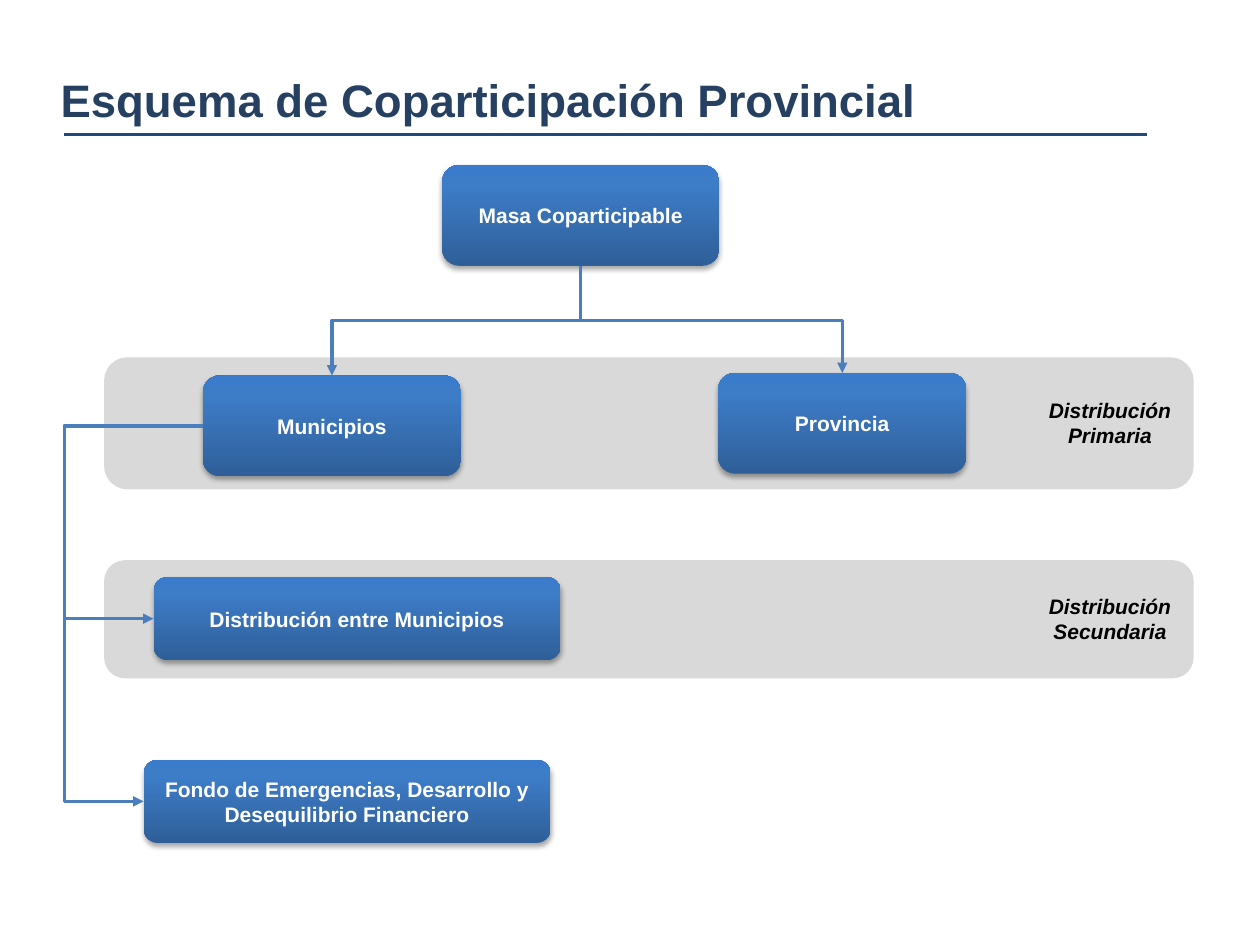
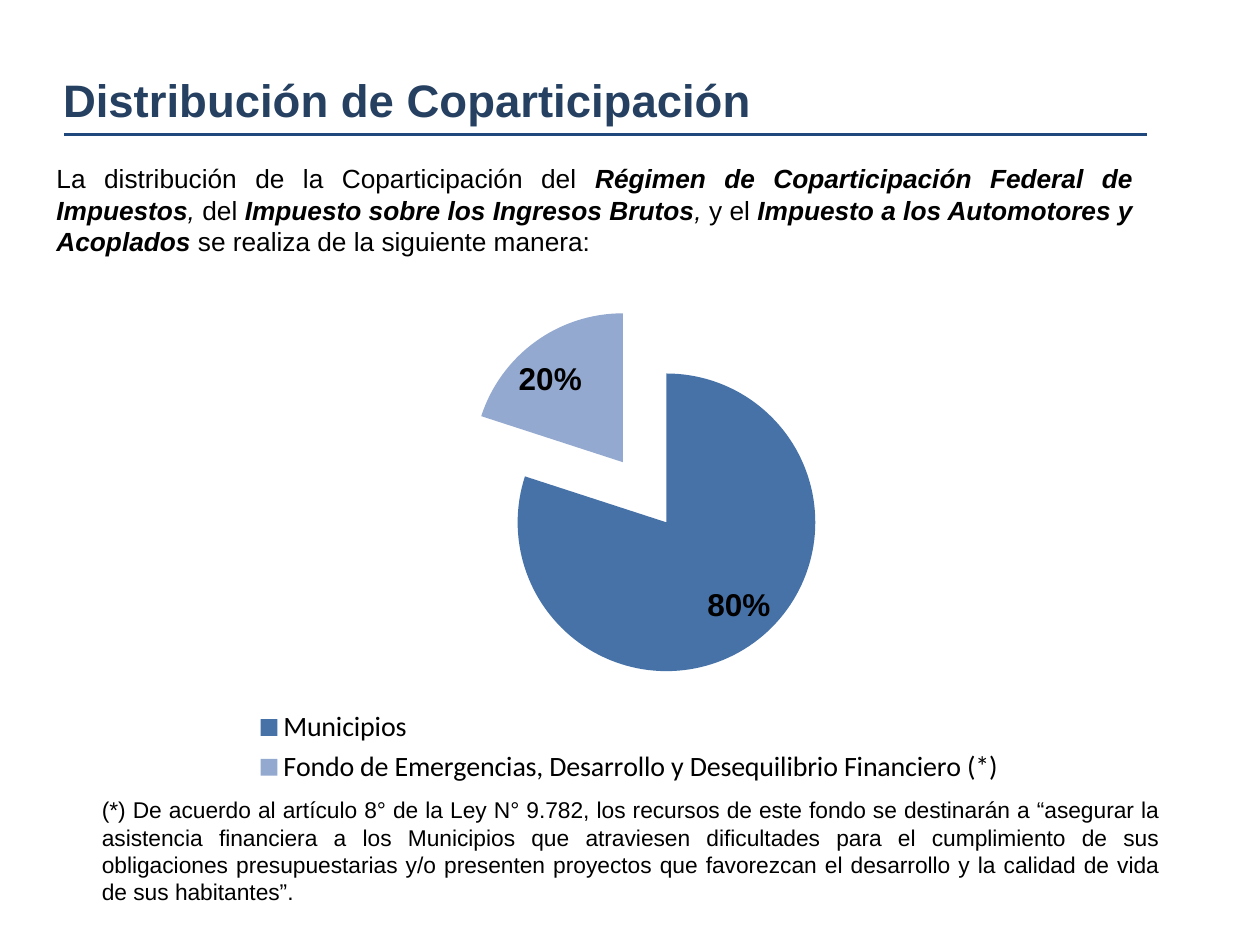
"""Build two slides on how provincial tax sharing is laid out and split."""
from copy import deepcopy
from dataclasses import dataclass

from lxml import etree
from pptx import Presentation
from pptx.chart.data import CategoryChartData
from pptx.dml.color import RGBColor
from pptx.enum.chart import XL_CHART_TYPE, XL_LABEL_POSITION, XL_LEGEND_POSITION
from pptx.enum.shapes import MSO_CONNECTOR, MSO_SHAPE
from pptx.enum.text import MSO_ANCHOR, PP_ALIGN
from pptx.oxml.ns import qn
from pptx.util import Pt

ROUND = MSO_SHAPE.ROUNDED_RECTANGLE
ELBOW, STRAIGHT = MSO_CONNECTOR.ELBOW, MSO_CONNECTOR.STRAIGHT
LEFT, MID, FULL = PP_ALIGN.LEFT, PP_ALIGN.CENTER, PP_ALIGN.JUSTIFY
TOP, CENTER = MSO_ANCHOR.TOP, MSO_ANCHOR.MIDDLE
PIE, BEST = XL_CHART_TYPE.PIE, XL_LABEL_POSITION.BEST_FIT
BOTTOM = XL_LEGEND_POSITION.BOTTOM
TITLE_ONLY = 5
TOP_SIDE, LEFT_SIDE, LOW_SIDE = 0, 1, 2


@dataclass(frozen=True)
class Theme:
    font: str = "Arial"
    chart_font: str = "Calibri"
    title: str = "254061"
    rule: str = "1F497D"
    band: str = "D9D9D9"
    link: str = "4B7EBC"
    ink: str = "000000"
    paper: str = "FFFFFF"
    fade: tuple = ((0, "2F5F99"), (0.8, "3D7CC7"), (1, "3A7CCB"))
    slices: tuple = ("4672A8", "93A9CF")
    title_size: float = 26
    lead_size: float = 15
    note_size: float = 13
    box_size: float = 12
    chart_size: float = 18
    key_size: float = 16


@dataclass(frozen=True)
class Box:
    left: float
    top: float
    width: float
    height: float
    text: str = ""

    def place(self) -> tuple:
        """Give the four lengths in points."""
        return Pt(self.left), Pt(self.top), Pt(self.width), Pt(self.height)


THEME = Theme()
RAIL = 36.7
BANDS = (
    Box(60.5, 205.2, 620.6, 73.4, "Distribución Primaria"),
    Box(60.5, 321.1, 620.6, 65.5, "Distribución Secundaria"),
)
NODES = {
    "mass": Box(252.7, 94.3, 158.4, 57.6, "Masa Coparticipable"),
    "state": Box(410.4, 213.1, 141.8, 57.6, "Provincia"),
    "towns": Box(115.9, 214.6, 147.6, 57.6, "Municipios"),
    "split": Box(87.8, 329.8, 232.6, 47.5, "Distribución entre Municipios"),
    "fund": Box(82.1, 434.2, 232.6, 47.5,
                "Fondo de Emergencias, Desarrollo y Desequilibrio Financiero"),
}
LEAD = (
    ("La distribución de la Coparticipación del ", ""),
    ("Régimen de Coparticipación Federal de Impuestos", "bi"),
    (", ", "i"),
    ("del ", ""),
    ("Impuesto sobre los Ingresos Brutos", "bi"),
    (",", "i"),
    (" y el ", ""),
    ("Impuesto a los Automotores y Acoplados ", "bi"),
    ("se realiza de la siguiente manera:", ""),
)
NOTE = (
    "(*) De acuerdo al artículo 8° de la Ley N° 9.782, los recursos de este "
    "fondo se destinarán a “asegurar la asistencia financiera a los Municipios "
    "que atraviesen dificultades para el cumplimiento de sus obligaciones "
    "presupuestarias y/o presenten proyectos que favorezcan el desarrollo y la "
    "calidad de vida de sus habitantes”."
)
SHARES = {
    "Municipios": 80,
    "Fondo de Emergencias, Desarrollo y Desequilibrio Financiero (*)": 20,
}


def rgb(code: str) -> RGBColor:
    """Turn a hex code into a colour."""
    return RGBColor.from_string(code)


def child(parent, tag: str, **attrs):
    """Add an XML element with the given attributes."""
    return etree.SubElement(parent, qn(tag), attrs)


def write(shape, text, *, size: float, color: str = THEME.ink, style: str = "",
          align=LEFT, anchor=TOP, inset: float = 7.2) -> None:
    """Fill a shape with one paragraph of plain or styled runs."""
    frame = shape.text_frame
    frame.word_wrap = True
    frame.vertical_anchor = anchor
    frame.margin_left = frame.margin_right = Pt(inset)
    frame.margin_top = frame.margin_bottom = Pt(3.6)
    para = frame.paragraphs[0]
    para.alignment = align
    for words, look in ((text, style),) if isinstance(text, str) else text:
        run = para.add_run()
        run.text = words
        font = run.font
        font.name, font.size = THEME.font, Pt(size)
        font.color.rgb = rgb(color)
        font.bold, font.italic = "b" in look, "i" in look


def label(slide, box: Box, text, **form) -> None:
    """Add a text box."""
    write(slide.shapes.add_textbox(*box.place()), text, **form)


def stroke(line, color: str, width: float) -> None:
    """Style a connector and clear its shadow."""
    line.line.color.rgb = rgb(color)
    line.line.width = Pt(width)
    child(line._element.spPr, "a:effectLst")


def start(deck, title: str, left: float):
    """Add a slide with its title and the rule below it."""
    slide = deck.slides.add_slide(deck.slide_layouts[TITLE_ONLY])
    head = slide.shapes.title
    head.left, head.top, head.width, head.height = Box(left, 37.4, 635, 38.9).place()
    write(head, title, size=THEME.title_size, color=THEME.title, style="b")
    rule = slide.shapes.add_connector(STRAIGHT, Pt(RAIL), Pt(77), Pt(655.2), Pt(77))
    stroke(rule, THEME.rule, 1.5)
    return slide


def band(slide, box: Box) -> None:
    """Draw a grey band with its label at the right."""
    shape = slide.shapes.add_shape(ROUND, *box.place())
    shape.shadow.inherit = False
    shape.fill.solid()
    shape.fill.fore_color.rgb = shape.line.color.rgb = rgb(THEME.band)
    shape.line.width = Pt(2)
    spot = Box(584.6, box.top + box.height / 2 - 18.4, 99.4, 36)
    label(slide, spot, box.text, size=THEME.box_size, style="bi",
          align=MID, anchor=CENTER)


def node(slide, box: Box):
    """Draw a shaded blue box with a soft shadow."""
    shape = slide.shapes.add_shape(ROUND, *box.place())
    shape.line.fill.background()
    shape.fill.gradient()
    shape.fill.gradient_angle = 90
    props = shape._element.spPr
    stops = props.find(".//" + qn("a:gsLst"))
    stops.append(deepcopy(stops[-1]))
    for stop, (place, color) in zip(shape.fill.gradient_stops, THEME.fade):
        stop.position = place
        stop.color.rgb = rgb(color)
    shape.shadow.inherit = False
    shade = child(props.find(qn("a:effectLst")), "a:outerShdw",
                  blurRad=str(Pt(3.1)), dist=str(Pt(1.8)), dir="5400000",
                  rotWithShape="0")
    tint = child(shade, "a:srgbClr", val=THEME.ink)
    child(tint, "a:alpha", val="35000")
    write(shape, box.text, size=THEME.box_size, color=THEME.paper, style="b",
          align=MID, anchor=CENTER, inset=3)
    return shape


def link(slide, first, last, side: int, goal: int):
    """Join two boxes with an elbow arrow."""
    line = slide.shapes.add_connector(ELBOW, 0, 0, 0, 0)
    line.begin_connect(first, side)
    line.end_connect(last, goal)
    stroke(line, THEME.link, 1.75)
    child(line.line._get_or_add_ln(), "a:tailEnd", type="triangle")
    return line


def bend(line, ratio: float) -> None:
    """Set where an elbow turns, as a share of its run."""
    guides = line._element.spPr.find(".//" + qn("a:avLst"))
    child(guides, "a:gd", name="adj1", fmla=f"val {round(ratio * 100000)}")


def drop(slide, first, last) -> None:
    """Link from the bottom of one box to the top of another."""
    line = link(slide, first, last, LOW_SIDE, TOP_SIDE)
    right = line.end_x > line.begin_x
    mid_x = (line.begin_x + line.end_x) // 2
    mid_y = (line.begin_y + line.end_y) // 2
    fall = last.top - first.top - first.height
    bend(line, (Pt(183) - line.begin_y) / fall)
    wide = line.width
    line.left, line.top = mid_x - fall // 2, mid_y - wide // 2
    line.width, line.height = fall, wide
    frame = line._element.spPr.find(qn("a:xfrm"))
    for flip in ("flipH", "flipV"):
        frame.attrib.pop(flip, None)
    frame.set("rot", "16200000" if right else "5400000")
    if right:
        frame.set("flipH", "1")


def loop(slide, first, last) -> None:
    """Link two left sides by way of the rail."""
    line = link(slide, first, last, LEFT_SIDE, LEFT_SIDE)
    bend(line, (first.left - Pt(RAIL)) / (first.left - last.left))


def scheme(deck) -> None:
    """Build the flow slide."""
    slide = start(deck, "Esquema de Coparticipación Provincial", 27.4)
    for box in BANDS:
        band(slide, box)
    nodes = {name: node(slide, box) for name, box in NODES.items()}
    for name in ("towns", "state"):
        drop(slide, nodes["mass"], nodes[name])
    for name in ("split", "fund"):
        loop(slide, nodes["towns"], nodes[name])


def pie(slide, box: Box) -> None:
    """Draw the pie of shares."""
    data = CategoryChartData()
    data.categories = list(SHARES)
    data.add_series("Distribución", list(SHARES.values()))
    chart = slide.shapes.add_chart(PIE, *box.place(), data).chart
    chart.has_title = False
    chart.font.name, chart.font.size = THEME.chart_font, Pt(THEME.chart_size)
    chart.font.color.rgb = rgb(THEME.ink)
    chart.has_legend = True
    key = chart.legend
    key.position, key.include_in_layout = BOTTOM, False
    key.font.name, key.font.size = THEME.chart_font, Pt(THEME.key_size)
    plot = chart.plots[0]
    row = plot.series[0]
    for spot, color in enumerate(THEME.slices):
        part = row.points[spot].format
        part.fill.solid()
        part.fill.fore_color.rgb = rgb(color)
        part.line.fill.background()
    burst = etree.Element(qn("c:explosion"), val="25")
    row._element.find(qn("c:dPt")).addprevious(burst)
    plot.has_data_labels = True
    tags = plot.data_labels
    tags.show_percentage, tags.show_value = True, False
    tags.number_format, tags.number_format_is_linked = "0%", False
    tags.position = BEST
    tags.font.name, tags.font.size = THEME.font, Pt(THEME.chart_size)
    tags.font.bold = True
    tags.font.color.rgb = rgb(THEME.ink)


def shares(deck) -> None:
    """Build the slide with the pie."""
    slide = start(deck, "Distribución de Coparticipación", 28.8)
    pie(slide, Box(70.6, 151.2, 578.2, 300.2))
    label(slide, Box(25.2, 89.3, 629.3, 61.9), LEAD, size=THEME.lead_size, align=FULL)
    label(slide, Box(51.1, 451.4, 617.8, 70.6), NOTE, size=THEME.note_size, align=FULL)


def main() -> None:
    """Build and save the deck."""
    deck = Presentation()
    deck.slide_width, deck.slide_height = Pt(720), Pt(540)
    scheme(deck)
    shares(deck)
    deck.save("out.pptx")


if __name__ == "__main__":
    main()
